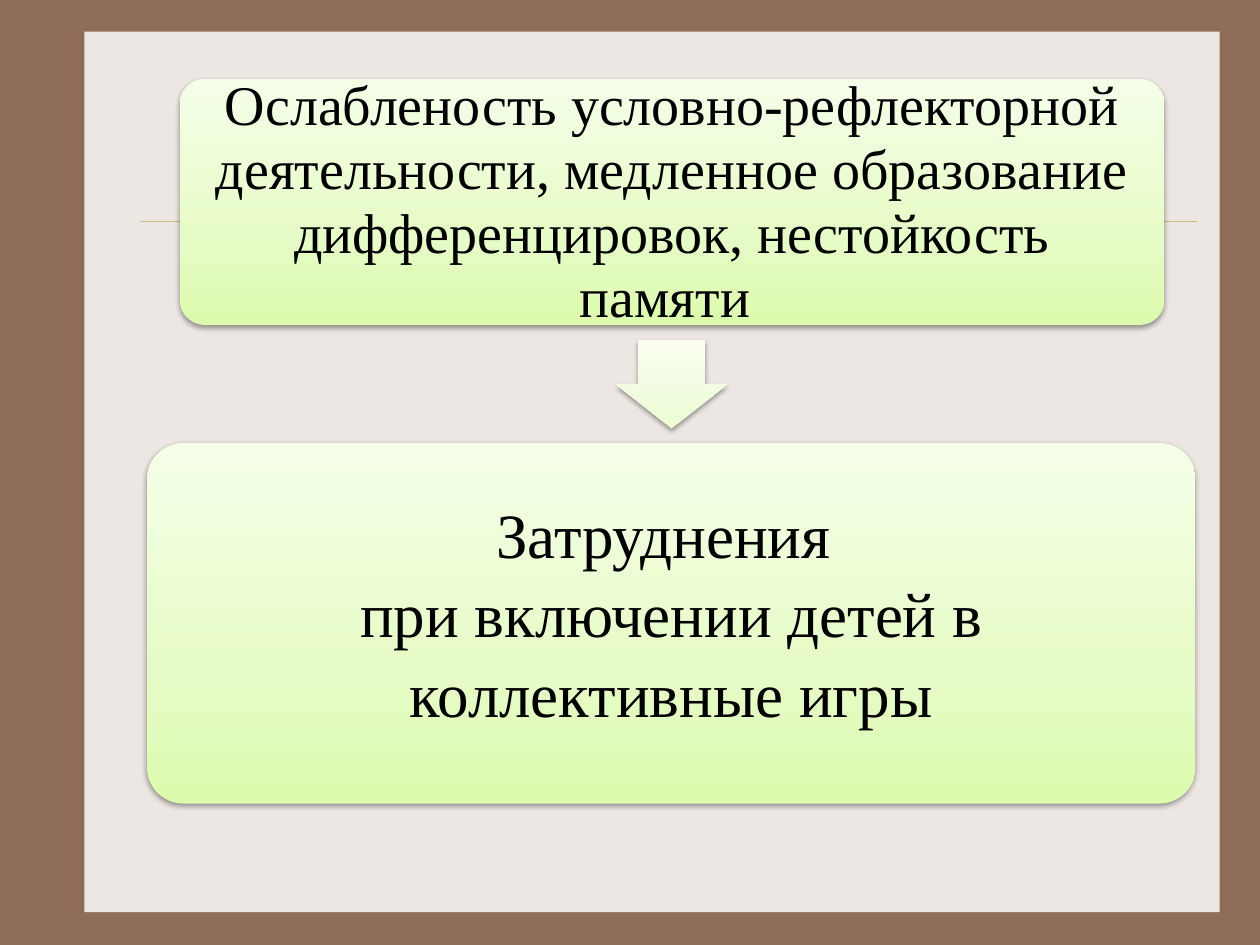
from lxml.etree import SubElement
from pptx import Presentation
from pptx.dml.color import RGBColor
from pptx.enum.shapes import MSO_CONNECTOR, MSO_SHAPE
from pptx.enum.text import MSO_ANCHOR, PP_ALIGN
from pptx.oxml.ns import qn
from pptx.util import Cm, Pt


def color(value):
    return RGBColor.from_string(value)


class SlideBuilder:
    font_name = "Times New Roman"
    text_color = "000000"
    box_gradient = [(0, "DCFBAD"), (35, "E6FBC5"), (100, "F5FFE8")]
    arrow_gradient = [(0, "EBFCD1"), (35, "F0FCDE"), (100, "F9FFF1")]

    def __init__(self, slide):
        self.slide = slide

    def background(self, fill):
        self.slide.background.fill.solid()
        self.slide.background.fill.fore_color.rgb = color(fill)

    def shape(self, kind, left, top, width, height):
        shape = self.slide.shapes.add_shape(
            kind, Cm(left), Cm(top), Cm(width), Cm(height))
        shape.shadow.inherit = False
        shape.line.fill.background()
        return shape

    def panel(self, left, top, width, height, fill):
        panel = self.shape(MSO_SHAPE.RECTANGLE, left, top, width, height)
        panel.fill.solid()
        panel.fill.fore_color.rgb = color(fill)

    def rule(self, left, top, right, line_color):
        rule = self.slide.shapes.add_connector(
            MSO_CONNECTOR.STRAIGHT, Cm(left), Cm(top), Cm(right), Cm(top))
        rule.line.color.rgb = color(line_color)
        rule.line.width = Pt(0.25)
        SubElement(rule._element.spPr, qn("a:effectLst"))

    def gradient(self, shape, stops):
        shape.fill.gradient()
        shape.fill.gradient_angle = 90
        stop_list = shape._element.spPr.find(".//" + qn("a:gsLst"))
        for stop in list(stop_list):
            stop_list.remove(stop)
        for position, value in stops:
            stop = SubElement(stop_list, qn("a:gs"), pos=str(position * 1000))
            SubElement(stop, qn("a:srgbClr"), val=value)

    def soft_shadow(self, shape):
        effects = shape._element.spPr.find(qn("a:effectLst"))
        shadow = SubElement(
            effects, qn("a:outerShdw"), blurRad=str(Pt(3.1)),
            dist=str(Pt(1.6)), dir="5400000", rotWithShape="0")
        shade = SubElement(shadow, qn("a:srgbClr"), val="000000")
        SubElement(shade, qn("a:alpha"), val="38000")

    def box(self, left, top, width, height, texts, size, inset,
            bottom_inset, line_spacing):
        box = self.shape(MSO_SHAPE.ROUNDED_RECTANGLE, left, top, width, height)
        box.adjustments[0] = 0.1
        self.gradient(box, self.box_gradient)
        self.soft_shadow(box)
        frame = box.text_frame
        frame.word_wrap = True
        frame.vertical_anchor = MSO_ANCHOR.MIDDLE
        frame.margin_left = frame.margin_right = frame.margin_top = Cm(inset)
        frame.margin_bottom = Cm(bottom_inset)
        for index, text in enumerate(texts):
            paragraph = frame.add_paragraph() if index else frame.paragraphs[0]
            paragraph.alignment = PP_ALIGN.CENTER
            paragraph.line_spacing = line_spacing
            run = paragraph.add_run()
            run.text = text
            run.font.name = self.font_name
            run.font.size = Pt(size)
            run.font.color.rgb = color(self.text_color)

    def down_arrow(self, left, top, width, height):
        arrow = self.shape(MSO_SHAPE.DOWN_ARROW, left, top, width, height)
        arrow.adjustments[0] = 0.6
        arrow.adjustments[1] = 0.5
        self.gradient(arrow, self.arrow_gradient)
        self.soft_shadow(arrow)


def main():
    presentation = Presentation()
    presentation.slide_width = Cm(25.4)
    presentation.slide_height = Cm(19.05)
    builder = SlideBuilder(
        presentation.slides.add_slide(presentation.slide_layouts[6]))
    builder.background("906D58")
    builder.panel(1.7, 0.64, 22.89, 17.75, "EDE7E3")
    builder.rule(2.82, 4.45, 24.13, "CBBD83")
    builder.box(
        3.63, 1.6, 19.84, 4.95,
        ["Ослабленость условно-рефлекторной деятельности, медленное "
         "образование дифференцировок, нестойкость памяти "],
        size=32, inset=0.48, bottom_inset=0.48, line_spacing=0.95)
    builder.down_arrow(12.42, 6.86, 2.24, 1.78)
    builder.box(
        2.97, 8.94, 21.13, 7.26,
        ["Затруднения ", "при включении детей в коллективные игры"],
        size=36, inset=0.58, bottom_inset=1.1, line_spacing=1.05)
    presentation.save("out.pptx")


if __name__ == "__main__":
    main()
